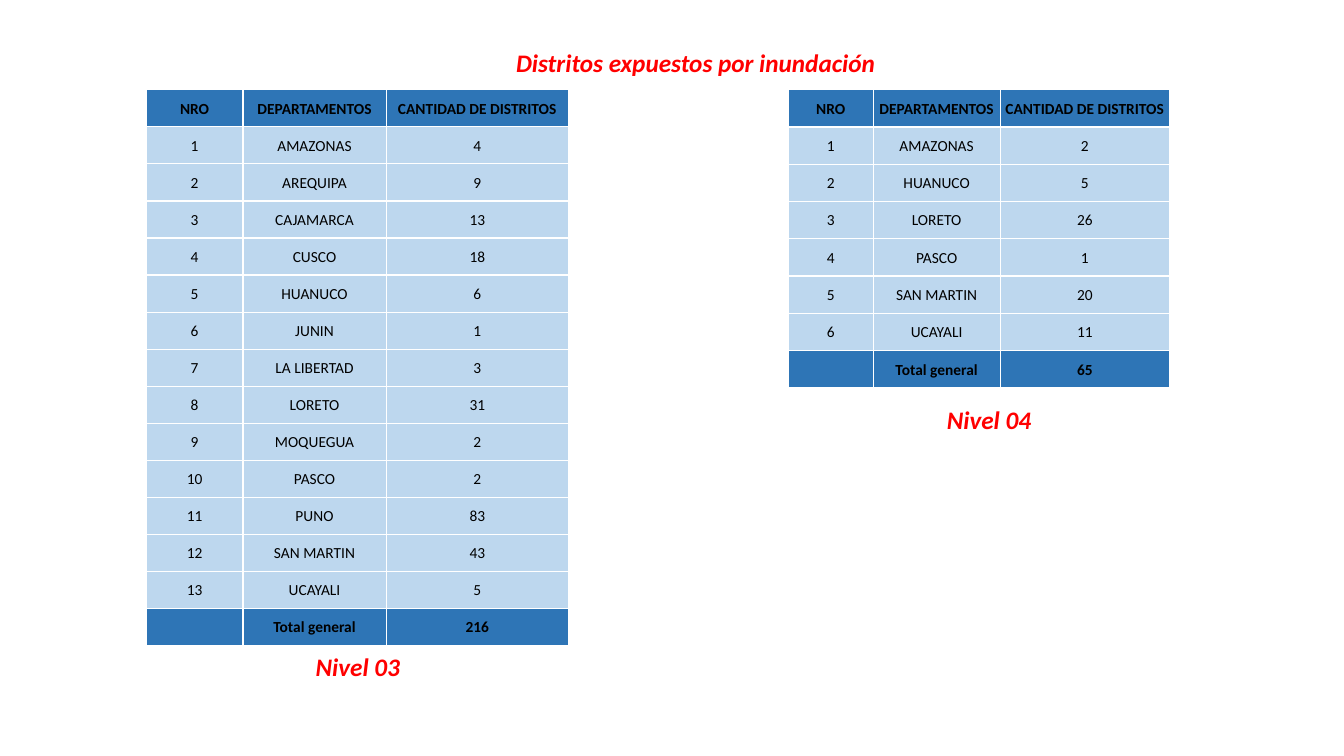
from lxml.etree import SubElement
from pptx import Presentation
from pptx.dml.color import RGBColor
from pptx.enum.text import MSO_ANCHOR, MSO_AUTO_SIZE, PP_ALIGN
from pptx.oxml.ns import qn
from pptx.util import Inches, Pt

HEADER_BLUE = "2E75B6"
ROW_BLUE = "BDD7EE"
HEADING_FORMAT = {"name": "Calibri", "size": Pt(18), "bold": True, "italic": True}
CELL_FORMAT = {"name": "Calibri", "size": Pt(11), "bold": False}
STRONG_FORMAT = CELL_FORMAT | {"bold": True}
CELL_LAYOUT = {
    "vertical_anchor": MSO_ANCHOR.MIDDLE,
    "margin_left": Inches(0.01),
    "margin_right": Inches(0.01),
    "margin_top": Inches(0.01),
    "margin_bottom": 0,
}
HEADERS = ("NRO", "DEPARTAMENTOS", "CANTIDAD DE DISTRITOS")

LEVEL_3 = {
    "AMAZONAS": 4, "AREQUIPA": 9, "CAJAMARCA": 13, "CUSCO": 18, "HUANUCO": 6,
    "JUNIN": 1, "LA LIBERTAD": 3, "LORETO": 31, "MOQUEGUA": 2, "PASCO": 2,
    "PUNO": 83, "SAN MARTIN": 43, "UCAYALI": 5,
}
LEVEL_4 = {
    "AMAZONAS": 2, "HUANUCO": 5, "LORETO": 26, "PASCO": 1, "SAN MARTIN": 20,
    "UCAYALI": 11,
}


def color(value):
    return RGBColor.from_string(value)


def apply_format(target, values):
    for name, value in values.items():
        setattr(target, name, value)


def write_text(text_frame, text, font_format, font_color):
    paragraph = text_frame.paragraphs[0]
    paragraph.alignment = PP_ALIGN.CENTER
    run = paragraph.add_run()
    run.text = text
    apply_format(run.font, font_format)
    run.font.color.rgb = color(font_color)


def write_heading(shape, text, wrap):
    frame_format = {"word_wrap": wrap, "auto_size": MSO_AUTO_SIZE.SHAPE_TO_FIT_TEXT,
                    "vertical_anchor": MSO_ANCHOR.TOP}
    apply_format(shape.text_frame, frame_format)
    write_text(shape.text_frame, text, HEADING_FORMAT, "FF0000")


def add_title(slide, left, top, width, height):
    title = slide.shapes.title
    position = {"left": left, "top": top, "width": width, "height": height}
    apply_format(title, {name: Inches(value) for name, value in position.items()})
    write_heading(title, "Distritos expuestos por inundación", False)


def add_borders(cell):
    properties = cell._tc.get_or_add_tcPr()
    for side in ("a:lnL", "a:lnR", "a:lnT", "a:lnB"):
        line = SubElement(properties, qn(side), w=str(Pt(1)))
        fill = SubElement(line, qn("a:solidFill"))
        SubElement(fill, qn("a:srgbClr"), val="FFFFFF")


def format_cell(cell, text, strong):
    apply_format(cell, CELL_LAYOUT)
    add_borders(cell)
    cell.fill.solid()
    cell.fill.fore_color.rgb = color(HEADER_BLUE if strong else ROW_BLUE)
    if text:
        write_text(cell.text_frame, text, STRONG_FORMAT if strong else CELL_FORMAT, "000000")


def add_district_table(slide, box, column_widths, districts, total):
    rows = [HEADERS]
    rows += [(number, *item) for number, item in enumerate(districts.items(), 1)]
    rows.append(("", "Total general", total))
    table = slide.shapes.add_table(len(rows), len(HEADERS), *map(Inches, box)).table
    for column, width in zip(table.columns, column_widths):
        column.width = Inches(width)
    for row_index, values in enumerate(rows):
        strong = row_index in (0, len(rows) - 1)
        for column_index, value in enumerate(values):
            format_cell(table.cell(row_index, column_index), str(value), strong)


def add_level(slide, box, column_widths, districts, total, caption, caption_offset):
    left, top, width, height = box
    add_district_table(slide, box, column_widths, districts, total)
    offset_x, offset_y = caption_offset
    caption_box = (left + offset_x, top + height + offset_y, 1.2, 0.4)
    write_heading(slide.shapes.add_textbox(*map(Inches, caption_box)), caption, True)


def main():
    presentation = Presentation()
    presentation.slide_width = Inches(13.33)
    presentation.slide_height = Inches(7.5)
    slide = presentation.slides.add_slide(presentation.slide_layouts[5])
    add_title(slide, 5, 0.42, 3.8, 0.4)
    add_level(slide, (1.45, 0.89, 4.19, 5.52), (0.96, 1.42, 1.81),
              LEVEL_3, 216, "Nivel 03", (1.5, 0))
    add_level(slide, (7.82, 0.89, 3.78, 2.96), (0.84, 1.26, 1.68),
              LEVEL_4, 65, "Nivel 04", (1.39, 0.11))
    presentation.save("out.pptx")


if __name__ == "__main__":
    main()
